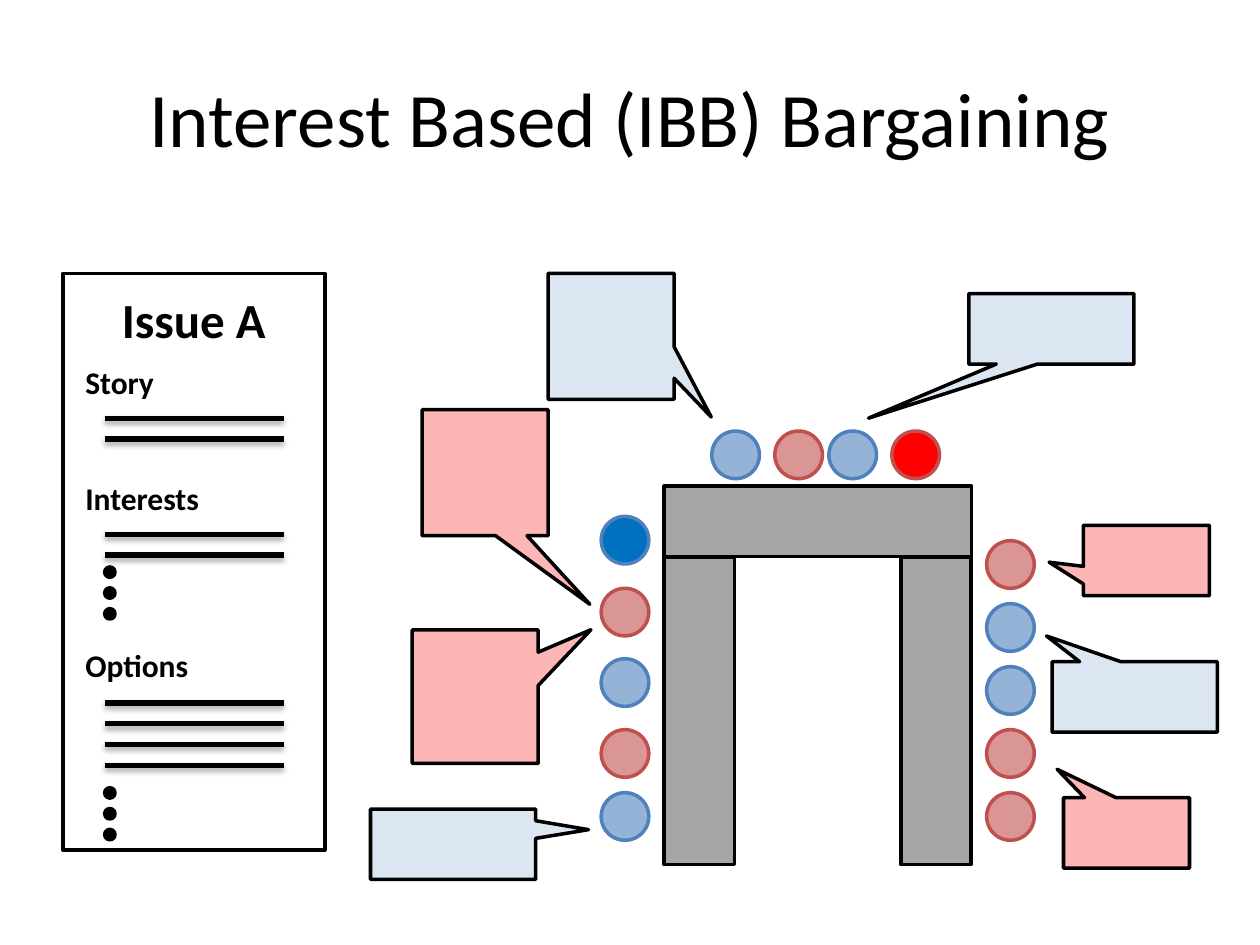
"""Build the interest based bargaining slide: issue sheet, table, seats and speech callouts."""
from lxml import etree
from pptx import Presentation
from pptx.dml.color import RGBColor
from pptx.enum.shapes import MSO_CONNECTOR, MSO_SHAPE
from pptx.enum.text import MSO_ANCHOR, MSO_AUTO_SIZE, PP_ALIGN
from pptx.oxml import parse_xml
from pptx.util import Cm, Pt

HUES = {
    "black": "000000", "white": "FFFFFF", "grey": "A6A6A6",
    "pale": "DCE6F2", "pink": "FCB6B6",
    "blue": "95B3D7", "deep": "0070C0", "navy": "4F81BD",
    "rose": "D99694", "red": "FF0000", "brick": "C0504D",
}
EDGES = {"blue": "navy", "deep": "navy", "rose": "brick", "red": "brick"}
SHADOW = (
    '<a:effectLst xmlns:a="http://schemas.openxmlformats.org/drawingml/2006/main">'
    '<a:outerShdw blurRad="40000" dist="23000" dir="5400000" rotWithShape="0">'
    '<a:srgbClr val="000000"><a:alpha val="35000"/></a:srgbClr>'
    '</a:outerShdw></a:effectLst>'
)


def draw(home, kind, box, fill):
    shape = home.add_shape(kind, *[Cm(n) for n in box])
    shape.shadow.inherit = False
    shape.fill.solid()
    shape.fill.fore_color.rgb = RGBColor.from_string(HUES[fill])
    shape.line.color.rgb = RGBColor.from_string(HUES[EDGES.get(fill, "black")])
    shape.line.width = Pt(2)
    return shape


def write(frame, text, size, bold, align):
    para = frame.paragraphs[0]
    para.alignment = align
    run = para.add_run()
    run.text = text
    run.font.name = "Calibri"
    run.font.size = Pt(size)
    run.font.bold = bold
    run.font.color.rgb = RGBColor.from_string(HUES["black"])


deck = Presentation()
deck.slide_width, deck.slide_height = Cm(25.4), Cm(19.05)
slide = deck.slides.add_slide(deck.slide_layouts[5])
shapes = slide.shapes

title = shapes.title
title.left, title.top, title.width, title.height = Cm(1.27), Cm(0.76), Cm(22.86), Cm(3.18)
title.text_frame.vertical_anchor = MSO_ANCHOR.MIDDLE
write(title.text_frame, "Interest Based (IBB) Bargaining", 44, False, PP_ALIGN.CENTER)

room = shapes.add_group_shape().shapes
seats = [
    (14.35, 8.69, "blue"), (15.62, 8.69, "rose"), (16.71, 8.69, "blue"), (17.98, 8.69, "red"),
    (12.12, 10.41, "deep"), (12.12, 11.86, "rose"), (12.12, 13.28, "blue"),
    (12.12, 14.71, "rose"), (12.12, 15.98, "blue"),
]
for i, hue in enumerate(["rose", "blue", "blue", "rose", "rose"]):
    seats.append((19.89, 10.9 + 1.27 * i, hue))
for x, y, hue in seats:
    draw(room, MSO_SHAPE.OVAL, (x, y, 0.96, 0.96), hue)
for box in [(13.39, 11.23, 1.42, 6.2), (18.16, 11.23, 1.42, 6.2), (13.39, 9.8, 6.2, 1.42)]:
    draw(room, MSO_SHAPE.RECTANGLE, box, "grey")

calls = [
    ((19.53, 5.92, 3.33, 1.42), (-1.107, 1.269), "pale"),
    ((11.05, 5.51, 2.54, 2.54), (0.795, 0.641), "pale"),
    ((8.51, 8.26, 2.54, 2.54), (0.832, 1.045), "pink"),
    ((21.84, 10.59, 2.54, 1.42), (-0.772, 0.024), "pink"),
    ((21.44, 16.08, 2.54, 1.42), (-0.551, -0.903), "pink"),
    ((8.31, 12.7, 2.54, 2.69), (0.919, -0.502), "pink"),
    ((21.21, 13.34, 3.33, 1.42), (-0.534, -0.866), "pale"),
    ((7.47, 16.31, 3.33, 1.42), (0.82, -0.207), "pale"),
]
for box, tip, hue in calls:
    call = draw(shapes, MSO_SHAPE.RECTANGULAR_CALLOUT, box, hue)
    call.adjustments[0], call.adjustments[1] = tip

draw(shapes, MSO_SHAPE.RECTANGLE, (1.27, 5.51, 5.28, 11.63), "white")
labels = [
    ("Issue A", (1.9, 5.72, 4.01, 1.45), 28, PP_ALIGN.CENTER),
    ("Story", (1.47, 7.19, 3.81, 1.02), 18, PP_ALIGN.LEFT),
    ("Interests", (1.47, 9.53, 3.81, 1.02), 18, PP_ALIGN.LEFT),
    ("Options", (1.47, 12.9, 3.81, 1.02), 18, PP_ALIGN.LEFT),
]
for text, box, size, align in labels:
    frame = shapes.add_textbox(*[Cm(n) for n in box]).text_frame
    frame.word_wrap = True
    frame.auto_size = MSO_AUTO_SIZE.SHAPE_TO_FIT_TEXT
    write(frame, text, size, True, align)

step = 0.42
for top, count in [(8.43, 2), (10.77, 2), (14.17, 4)]:
    for i in range(count):
        y = Cm(top + step * i)
        rule = shapes.add_connector(MSO_CONNECTOR.STRAIGHT, Cm(2.11), y, Cm(5.72), y)
        rule.line.color.rgb = RGBColor.from_string(HUES["black"])
        rule.line.width = Pt(3)
        rule._element.spPr.append(parse_xml(SHADOW))

for top in (11.43, 15.88):
    dots = shapes.add_group_shape().shapes
    for i in range(3):
        draw(dots, MSO_SHAPE.OVAL, (2.11, top + step * i, 0.21, 0.21), "black")

deck.save("out.pptx")
